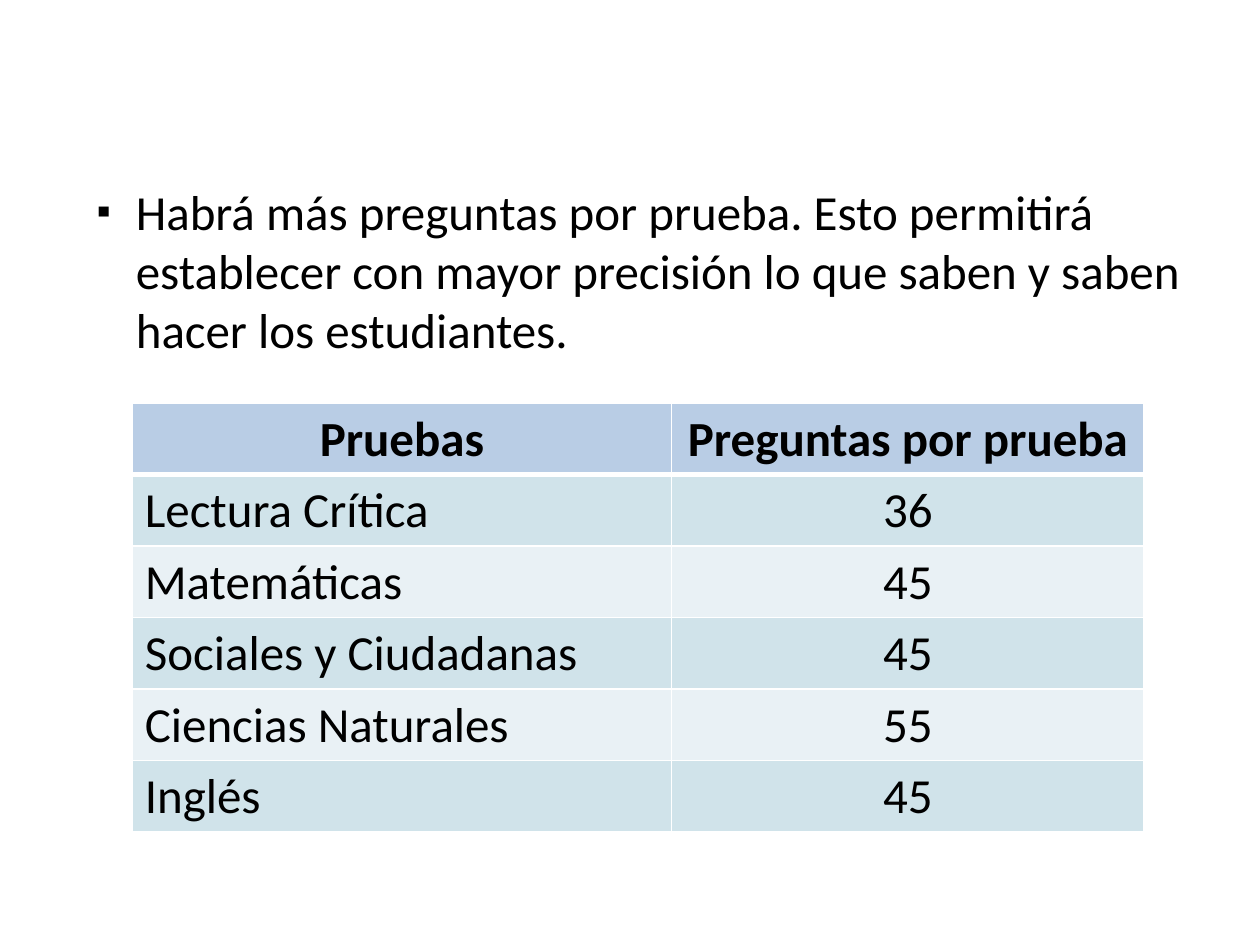
from dataclasses import dataclass

from lxml import etree
from pptx import Presentation
from pptx.dml.color import RGBColor
from pptx.enum.text import PP_ALIGN
from pptx.oxml.ns import qn
from pptx.util import Inches, Pt

LEFT, CENTER = PP_ALIGN.LEFT, PP_ALIGN.CENTER


@dataclass(frozen=True)
class Theme:
    font: str = "Calibri"
    size: int = 28
    text: str = "000000"
    head: str = "B9CDE5"
    bands: tuple = ("D0E3EA", "E9F1F5")
    rule: str = "FFFFFF"
    thin: int = 1
    thick: int = 3


THEME = Theme()
CLAIM = ("Habrá más preguntas por prueba. Esto permitirá establecer con mayor "
         "precisión lo que saben y saben hacer los estudiantes.")
ROWS = [
    ("Pruebas", "Preguntas por prueba"),
    ("Lectura Crítica", "36"),
    ("Matemáticas", "45"),
    ("Sociales y Ciudadanas", "45"),
    ("Ciencias Naturales", "55"),
    ("Inglés", "45"),
]


def style(para, bold=False):
    for run in para.runs:
        font = run.font
        font.name, font.size, font.bold = THEME.font, Pt(THEME.size), bold
        font.color.rgb = RGBColor.from_string(THEME.text)


def add_bullet(para, mark, indent, scale):
    """Give the paragraph a hanging bullet, sized as a percentage of its text."""
    props = para._p.get_or_add_pPr()
    props.set("marL", str(indent))
    props.set("indent", str(-indent))
    etree.SubElement(props, qn("a:buSzPct"), val=str(scale * 1000))
    etree.SubElement(props, qn("a:buFont"), typeface=THEME.font)
    etree.SubElement(props, qn("a:buChar"), char=mark)


def add_claim(slide, box):
    frame = slide.shapes.add_textbox(*map(Inches, box)).text_frame
    frame.word_wrap = True
    para = frame.paragraphs[0]
    para.text = CLAIM
    add_bullet(para, "▪", Inches(0.31), 80)
    style(para)


def add_edges(cell, widths):
    """Draw the cell's borders; widths maps each side (L, R, T, B) to points."""
    props = cell._tc.get_or_add_tcPr()
    for side, width in widths.items():
        line = etree.SubElement(props, qn(f"a:ln{side}"), w=str(Pt(width)))
        fill = etree.SubElement(line, qn("a:solidFill"))
        etree.SubElement(fill, qn("a:srgbClr"), val=THEME.rule)


def fill_cell(cell, text, row, col):
    head = row == 0
    para = cell.text_frame.paragraphs[0]
    para.text = text
    para.alignment = CENTER if head or col else LEFT
    style(para, bold=head)
    edges = dict.fromkeys("LRTB", THEME.thin)
    if head:
        edges["B"] = THEME.thick
    elif row == 1:
        edges["T"] = THEME.thick
    add_edges(cell, edges)
    cell.fill.solid()
    color = THEME.head if head else THEME.bands[(row - 1) % 2]
    cell.fill.fore_color.rgb = RGBColor.from_string(color)


def add_tests(slide, box, widths):
    table = slide.shapes.add_table(
        len(ROWS), len(widths), *map(Inches, box)).table
    for col, width in zip(table.columns, widths):
        col.width = Inches(width)
    for row, texts in enumerate(ROWS):
        for col, text in enumerate(texts):
            fill_cell(table.cell(row, col), text, row, col)


def main():
    deck = Presentation()
    deck.slide_width, deck.slide_height = Inches(10), Inches(7.5)
    slide = deck.slides.add_slide(deck.slide_layouts[6])
    add_claim(slide, (0.67, 1.39, 8.9, 1.51))
    add_tests(slide, (1.05, 3.2, 8.03, 3.4), (4.28, 3.75))
    deck.save("out.pptx")


if __name__ == "__main__":
    main()
